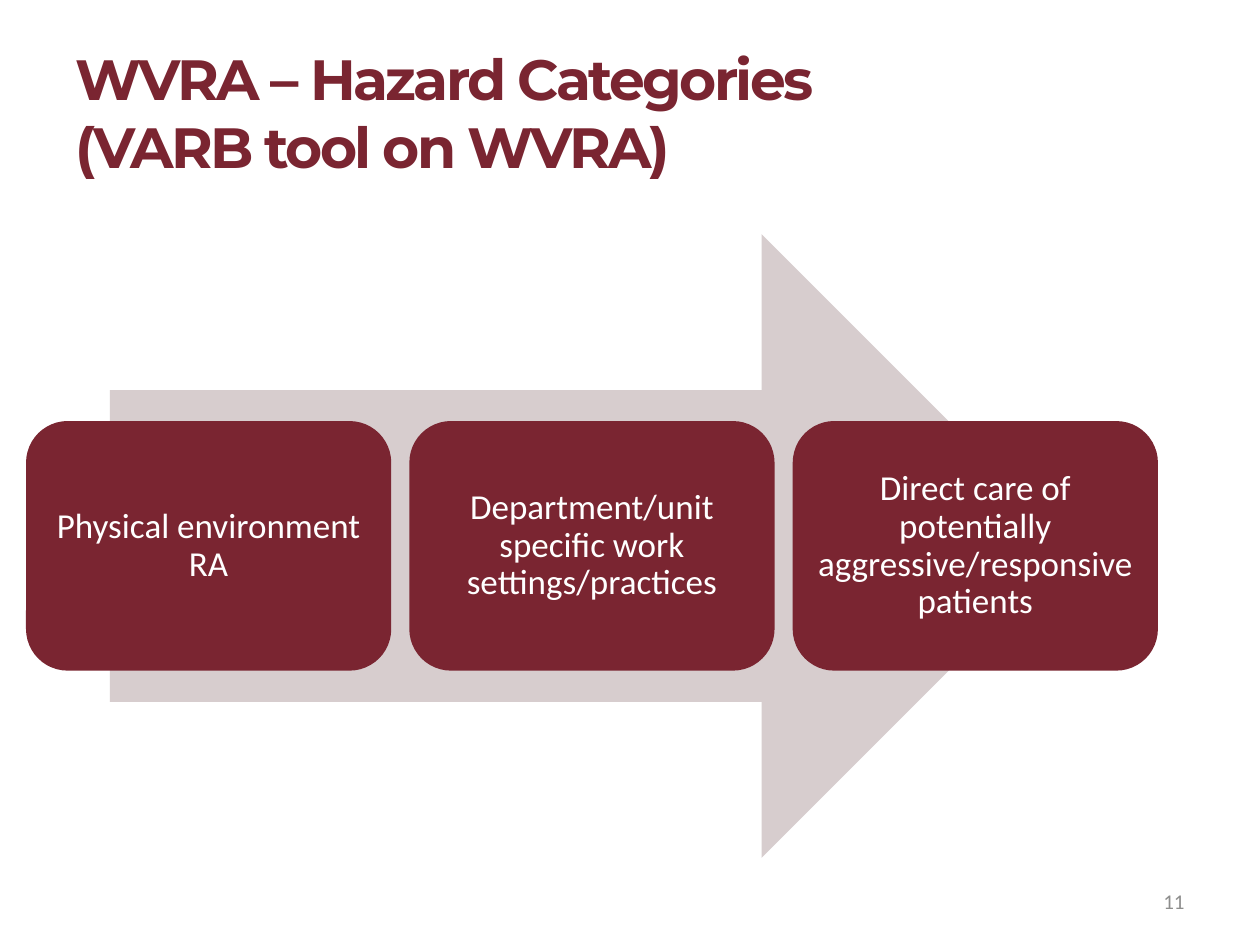
from dataclasses import dataclass

from pptx import Presentation
from pptx.dml.color import RGBColor
from pptx.enum.shapes import MSO_SHAPE as Shape
from pptx.enum.text import MSO_ANCHOR as Anchor, MSO_AUTO_SIZE as AutoSize, PP_ALIGN as Align
from pptx.util import Pt

MAROON = RGBColor(0x7A, 0x25, 0x31)
PALE = RGBColor(0xD7, 0xCD, 0xCE)
WHITE = RGBColor(0xFF, 0xFF, 0xFF)
GREY = RGBColor(0x8E, 0x8E, 0x8D)

CARD_LEFT, CARD_TOP = 14.9, 240.6
CARD_W, CARD_H = 208.7, 142.6
CARD_PITCH = 219.05
CARD_INSET = 6

CATEGORIES = (
    "Physical environment RA",
    "Department/unit specific work settings/practices",
    "Direct care of potentially aggressive/responsive patients",
)


@dataclass(frozen=True)
class Box:
    left: float
    top: float
    width: float
    height: float

    def emu(self) -> tuple:
        return Pt(self.left), Pt(self.top), Pt(self.width), Pt(self.height)


@dataclass(frozen=True)
class TextStyle:
    size: float
    color: RGBColor
    align: Align
    font: str = "Calibri"
    bold: bool = False
    line_spacing: float = 1.0


TITLE = TextStyle(32.4, MAROON, Align.LEFT, "Montserrat", True)
CARD = TextStyle(20, WHITE, Align.CENTER, line_spacing=0.9)
NUMBER = TextStyle(12, GREY, Align.RIGHT)


def set_attrs(target, values: dict) -> None:
    for name, value in values.items():
        setattr(target, name, value)


def write(sp, text: str, style: TextStyle):
    tf = sp.text_frame
    set_attrs(tf, {"word_wrap": True, "auto_size": AutoSize.NONE,
                   "vertical_anchor": Anchor.MIDDLE})
    p = tf.paragraphs[0]
    set_attrs(p, {"alignment": style.align, "line_spacing": style.line_spacing})
    r = p.add_run()
    r.text = text
    set_attrs(r.font, {"name": style.font, "size": Pt(style.size), "bold": style.bold})
    r.font.color.rgb = style.color
    return r


def add_block(s, kind: Shape, box: Box, fill: RGBColor):
    sp = s.shapes.add_shape(kind, *box.emu())
    sp.shadow.inherit = False
    sp.fill.solid()
    sp.fill.fore_color.rgb = fill
    sp.line.fill.background()
    return sp


def add_card(s, index: int, text: str) -> None:
    box = Box(CARD_LEFT + index * CARD_PITCH, CARD_TOP, CARD_W, CARD_H)
    sp = add_block(s, Shape.ROUNDED_RECTANGLE, box, MAROON)
    sides = ("left", "top", "right", "bottom")
    set_attrs(sp.text_frame, {f"margin_{side}": Pt(CARD_INSET) for side in sides})
    write(sp, text, CARD)


def add_title(s, text: str, box: Box) -> None:
    sp = s.shapes.title
    set_attrs(sp, dict(zip(("left", "top", "width", "height"), box.emu())))
    r = write(sp, text, TITLE)
    r.font._element.set("spc", "-150")


def main() -> None:
    prs = Presentation()
    set_attrs(prs, {"slide_width": Pt(720), "slide_height": Pt(540)})
    s = prs.slides.add_slide(prs.slide_layouts[5])
    add_title(s, "WVRA – Hazard Categories (VARB tool on WVRA)",
              Box(36, 21.6, 505.4, 84.2))
    add_block(s, Shape.RIGHT_ARROW, Box(62.8, 133.8, 550.6, 356.4), PALE)
    for index, text in enumerate(CATEGORIES):
        add_card(s, index, text)
    number = s.shapes.add_textbox(*Box(516, 500.5, 168, 28.75).emu())
    write(number, "11", NUMBER)
    prs.save("out.pptx")


if __name__ == "__main__":
    main()
